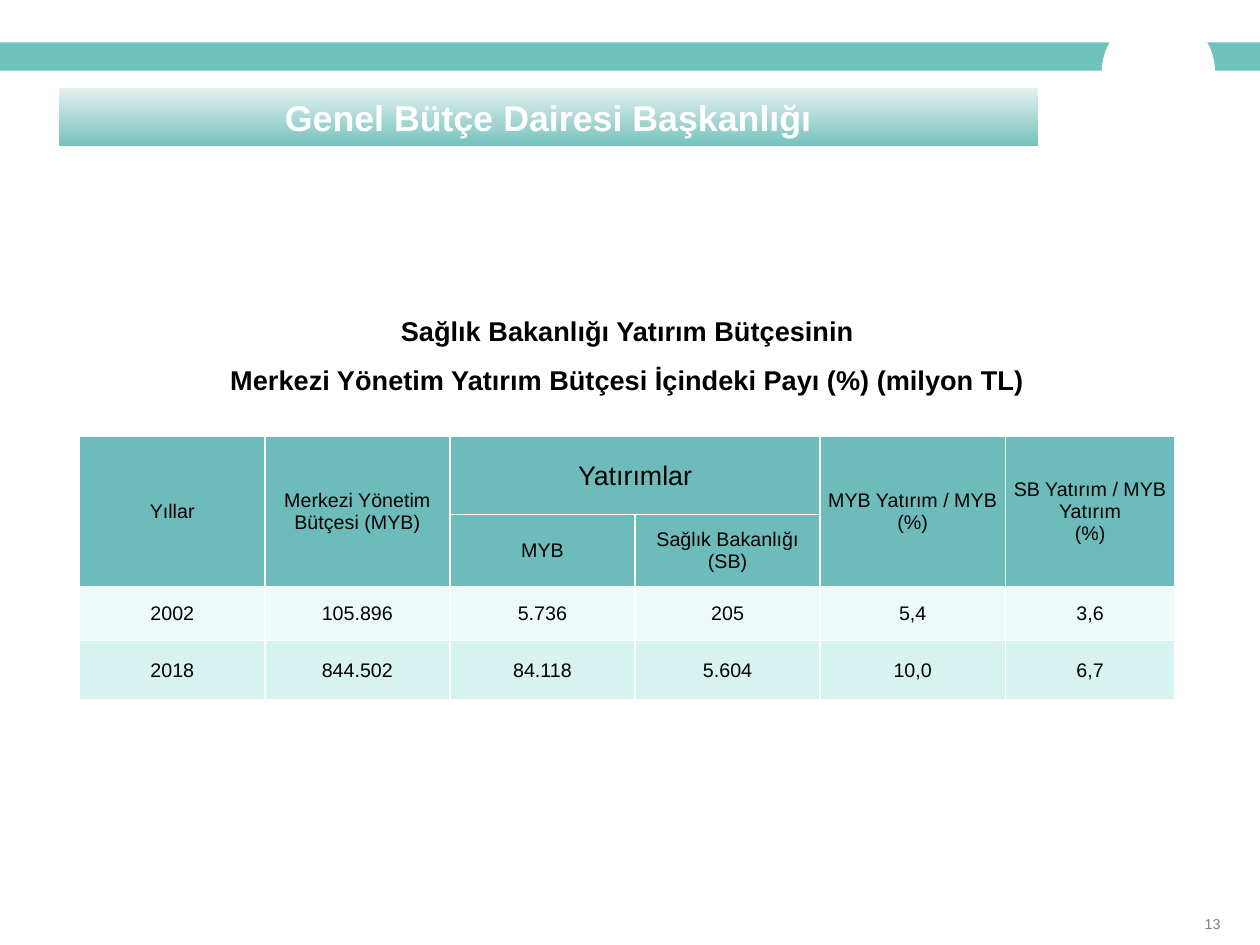
from dataclasses import dataclass

from lxml.etree import SubElement
from pptx import Presentation
from pptx.dml.color import RGBColor
from pptx.enum.shapes import MSO_SHAPE as Shape
from pptx.enum.text import MSO_ANCHOR as Anchor, MSO_AUTO_SIZE as AutoSize, PP_ALIGN as Align
from pptx.oxml.ns import qn
from pptx.util import Inches, Pt

COLORS = {
    "white": "FFFFFF",
    "black": "000000",
    "page": "808080",
    "band": "6FC3BF",
    "title_top": "E1EFEE",
    "title_bottom": "75C2BD",
    "header": "6DBCBB",
    "row_2002": "EDFAF9",
    "row_2018": "D7F3F0",
}
COLUMN_WIDTHS = [1.44] * 5 + [1.32]
ROW_HEIGHTS = [0.61, 0.56, 0.42, 0.46]


@dataclass
class Box:
    left: float
    top: float
    width: float
    height: float

    def lengths(self):
        return [Inches(v) for v in (self.left, self.top, self.width, self.height)]


@dataclass
class TableCell:
    row: int
    col: int
    text: str
    fill: str = "header"
    size: float = 11
    rows: int = 1
    cols: int = 1


HEADERS = [
    TableCell(0, 0, "Yıllar", rows=2),
    TableCell(0, 1, "Merkezi Yönetim Bütçesi (MYB)", rows=2),
    TableCell(0, 2, "Yatırımlar", size=15, cols=2),
    TableCell(0, 4, "MYB Yatırım / MYB\v(%)", rows=2),
    TableCell(0, 5, "SB Yatırım / MYB Yatırım\v(%)", rows=2),
    TableCell(1, 2, "MYB"),
    TableCell(1, 3, "Sağlık Bakanlığı (SB)"),
]
BUDGET_ROWS = [
    ("row_2002", ["2002", "105.896", "5.736", "205", "5,4", "3,6"]),
    ("row_2018", ["2018", "844.502", "84.118", "5.604", "10,0", "6,7"]),
]


def rgb(name: str) -> RGBColor:
    return RGBColor.from_string(COLORS[name])


def format_text(frame, size: float, color: str, bold: bool = False, align=Align.CENTER) -> None:
    for paragraph in frame.paragraphs:
        paragraph.alignment = align
        paragraph.font.name = "Arial"
        paragraph.font.size = Pt(size)
        paragraph.font.bold = bold
        paragraph.font.color.rgb = rgb(color)


def set_margins(frame, left: float, top: float, right: float, bottom: float) -> None:
    frame.margin_left, frame.margin_top = Inches(left), Inches(top)
    frame.margin_right, frame.margin_bottom = Inches(right), Inches(bottom)


def add_plain_shape(slide, kind, box: Box, color: str) -> None:
    shape = slide.shapes.add_shape(kind, *box.lengths())
    shape.shadow.inherit = False
    shape.fill.solid()
    shape.fill.fore_color.rgb = rgb(color)
    shape.line.fill.background()


def format_title(title, box: Box) -> None:
    title.left, title.top, title.width, title.height = box.lengths()
    title.fill.gradient()
    title.fill.gradient_angle = 270
    stops = title.fill.gradient_stops
    for stop, position, color in zip(stops, (0.04, 1), ("title_top", "title_bottom")):
        stop.position = position
        stop.color.rgb = rgb(color)
    title.line.color.rgb = rgb("white")
    title.line.width = Pt(0.75)
    frame = title.text_frame
    frame.text = "Genel Bütçe Dairesi Başkanlığı"
    frame.auto_size = AutoSize.NONE
    frame.vertical_anchor = Anchor.MIDDLE
    set_margins(frame, 0.08, 0.08, 0.08, 0.08)
    format_text(frame, 20, "white", bold=True)


def add_table_heading(slide, box: Box) -> None:
    frame = slide.shapes.add_textbox(*box.lengths()).text_frame
    frame.word_wrap = True
    frame.text = (
        "Sağlık Bakanlığı Yatırım Bütçesinin\n"
        "Merkezi Yönetim Yatırım Bütçesi İçindeki Payı (%) (milyon TL)"
    )
    format_text(frame, 15.2, "black", bold=True)
    for paragraph in frame.paragraphs:
        paragraph.line_spacing = 1.5


def set_borders(cell, color: str) -> None:
    properties = cell._tc.get_or_add_tcPr()
    for position, side in enumerate(("a:lnL", "a:lnR", "a:lnT", "a:lnB")):
        line = SubElement(properties, qn(side), w=str(Pt(1)))
        fill = SubElement(line, qn("a:solidFill"))
        SubElement(fill, qn("a:srgbClr"), val=COLORS[color])
        properties.insert(position, line)


def add_budget_table(slide, box: Box) -> None:
    table = slide.shapes.add_table(len(ROW_HEIGHTS), len(COLUMN_WIDTHS), *box.lengths()).table
    for column, width in zip(table.columns, COLUMN_WIDTHS):
        column.width = Inches(width)
    for row, height in zip(table.rows, ROW_HEIGHTS):
        row.height = Inches(height)
    for cell in table.iter_cells():
        cell.fill.solid()
        cell.fill.fore_color.rgb = rgb("header")
        set_borders(cell, "white")
    values = [
        TableCell(row, col, text, fill)
        for row, (fill, texts) in enumerate(BUDGET_ROWS, start=2)
        for col, text in enumerate(texts)
    ]
    for item in HEADERS + values:
        cell = table.cell(item.row, item.col)
        if item.rows > 1 or item.cols > 1:
            cell.merge(table.cell(item.row + item.rows - 1, item.col + item.cols - 1))
        cell.text = item.text
        cell.fill.fore_color.rgb = rgb(item.fill)
        cell.vertical_anchor = Anchor.MIDDLE
        set_margins(cell, 0.01, 0.01, 0.01, 0)
        format_text(cell.text_frame, item.size, "black")


def add_page_number(slide, box: Box) -> None:
    frame = slide.shapes.add_textbox(*box.lengths()).text_frame
    frame.text = "13"
    frame.word_wrap = False
    frame.vertical_anchor = Anchor.MIDDLE
    set_margins(frame, 0, 0, 0, 0)
    format_text(frame, 8, "page", align=Align.LEFT)


def main() -> None:
    deck = Presentation()
    deck.slide_width, deck.slide_height = Inches(9.8), Inches(7.35)
    slide = deck.slides.add_slide(deck.slide_layouts[5])
    add_plain_shape(slide, Shape.RECTANGLE, Box(0, 0.33, 9.8, 0.22), "band")
    add_plain_shape(slide, Shape.OVAL, Box(8.57, 0.11, 0.88, 0.89), "white")
    format_title(slide.shapes.title, Box(0.45, 0.68, 7.63, 0.46))
    add_table_heading(slide, Box(0.62, 2.27, 8.52, 0.87))
    add_budget_table(slide, Box(0.62, 3.39, sum(COLUMN_WIDTHS), sum(ROW_HEIGHTS)))
    add_page_number(slide, Box(9.37, 7.12, 0.14, 0.13))
    deck.save("out.pptx")


if __name__ == "__main__":
    main()
